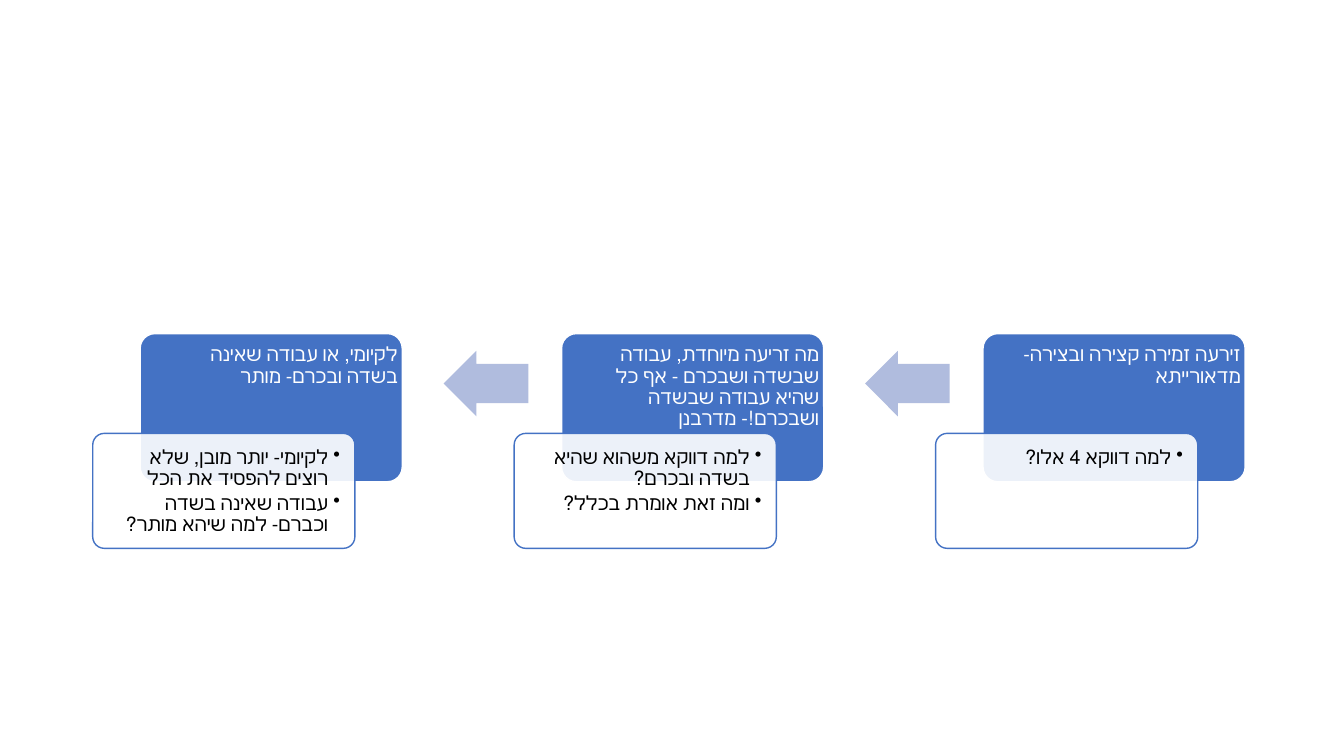
from dataclasses import dataclass

from lxml.etree import SubElement
from pptx import Presentation
from pptx.dml.color import RGBColor as RGB
from pptx.enum.shapes import MSO_SHAPE as Kind
from pptx.enum.text import MSO_ANCHOR as Anchor, PP_ALIGN as Align
from pptx.oxml.ns import qn
from pptx.util import Inches, Pt


@dataclass(frozen=True)
class Theme:
    blue: RGB = RGB(0x44, 0x72, 0xC4)
    pale: RGB = RGB(0xB0, 0xBC, 0xDE)
    white: RGB = RGB(0xFF, 0xFF, 0xFF)
    black: RGB = RGB(0, 0, 0)
    font: str = "Calibri"
    size: int = 14


THEME = Theme()
PITCH = 4.18
LAST = 9.75  # left edge of the first step, which stands at the right

STEPS = [
    ("זירעה זמירה קצירה ובצירה- מדאורייתא",
     ["למה דווקא 4 אלו?"]),
    ("מה זריעה מיוחדת, עבודה שבשדה ושבכרם - אף כל שהיא עבודה שבשדה "
     "ושבכרם!- מדרבנן",
     ["למה דווקא משהוא שהיא בשדה ובכרם?", "ומה זאת אומרת בכלל?"]),
    ("לקיומי, או עבודה שאינה בשדה ובכרם- מותר",
     ["לקיומי- יותר מובן, שלא רוצים להפסיד את הכל",
      "עבודה שאינה בשדה וכברם- למה שיהא מותר?"]),
]


def add_box(slide, kind, at, fill, line=None, adjust=(0.1,)):
    box = slide.shapes.add_shape(kind, *map(Inches, at))
    box.shadow.inherit = False
    for i, value in enumerate(adjust):
        box.adjustments[i] = value
    box.fill.solid()
    box.fill.fore_color.rgb = fill
    if line is None:
        box.line.fill.background()
    else:
        box.line.color.rgb = line
        box.line.width = Pt(1)
    return box


def set_alpha(box, percent):
    color = box.fill._xPr.find(qn("a:solidFill"))[0]
    SubElement(color, qn("a:alpha"), val=str(percent * 1000))


def set_text(box, lines, *, color, insets, after, bullet=False):
    """Fill a box with right-to-left paragraphs."""
    frame = box.text_frame
    frame.word_wrap = True
    frame.vertical_anchor = Anchor.TOP
    (frame.margin_left, frame.margin_top,
     frame.margin_right, frame.margin_bottom) = map(Inches, insets)
    for i, line in enumerate(lines):
        para = frame.paragraphs[0] if i == 0 else frame.add_paragraph()
        props = para._p.get_or_add_pPr()
        props.set("rtl", "1")
        if bullet:
            indent = Inches(0.12)
            props.set("marL", str(indent))
            props.set("indent", str(-indent))
            SubElement(props, qn("a:buChar"), char="•")
        para.alignment = Align.RIGHT
        para.line_spacing = 0.9
        para.space_after = Pt(after)
        run = para.add_run()
        run.text = line
        run.font.size = Pt(THEME.size)
        run.font.color.rgb = color
        run.font.name = THEME.font


def add_step(slide, left, title, notes):
    head = add_box(slide, Kind.ROUNDED_RECTANGLE, (left, 3.31, 2.6, 1.47),
                   THEME.blue, THEME.white)
    set_text(head, [title], color=THEME.white,
             insets=(0.13, 0.07, 0, 0.02), after=4.9)
    card = add_box(slide, Kind.ROUNDED_RECTANGLE,
                   (left - 0.47, 4.3, 2.6, 1.14), THEME.white, THEME.blue)
    set_alpha(card, 90)
    set_text(card, notes, color=THEME.black,
             insets=(0.11, 0.11, 0.11, 0.11), after=2.1, bullet=True)


def add_arrow(slide, left):
    add_box(slide, Kind.LEFT_ARROW, (left, 3.48, 0.84, 0.65),
            THEME.pale, adjust=(0.6, 0.5))


def main():
    deck = Presentation()
    deck.slide_width, deck.slide_height = Inches(13.33), Inches(7.5)
    slide = deck.slides.add_slide(deck.slide_layouts[6])
    for i, (title, notes) in enumerate(STEPS):
        left = LAST - i * PITCH
        add_step(slide, left, title, notes)
        if i < len(STEPS) - 1:
            add_arrow(slide, left - 1.17)
    deck.save("out.pptx")


if __name__ == "__main__":
    main()
